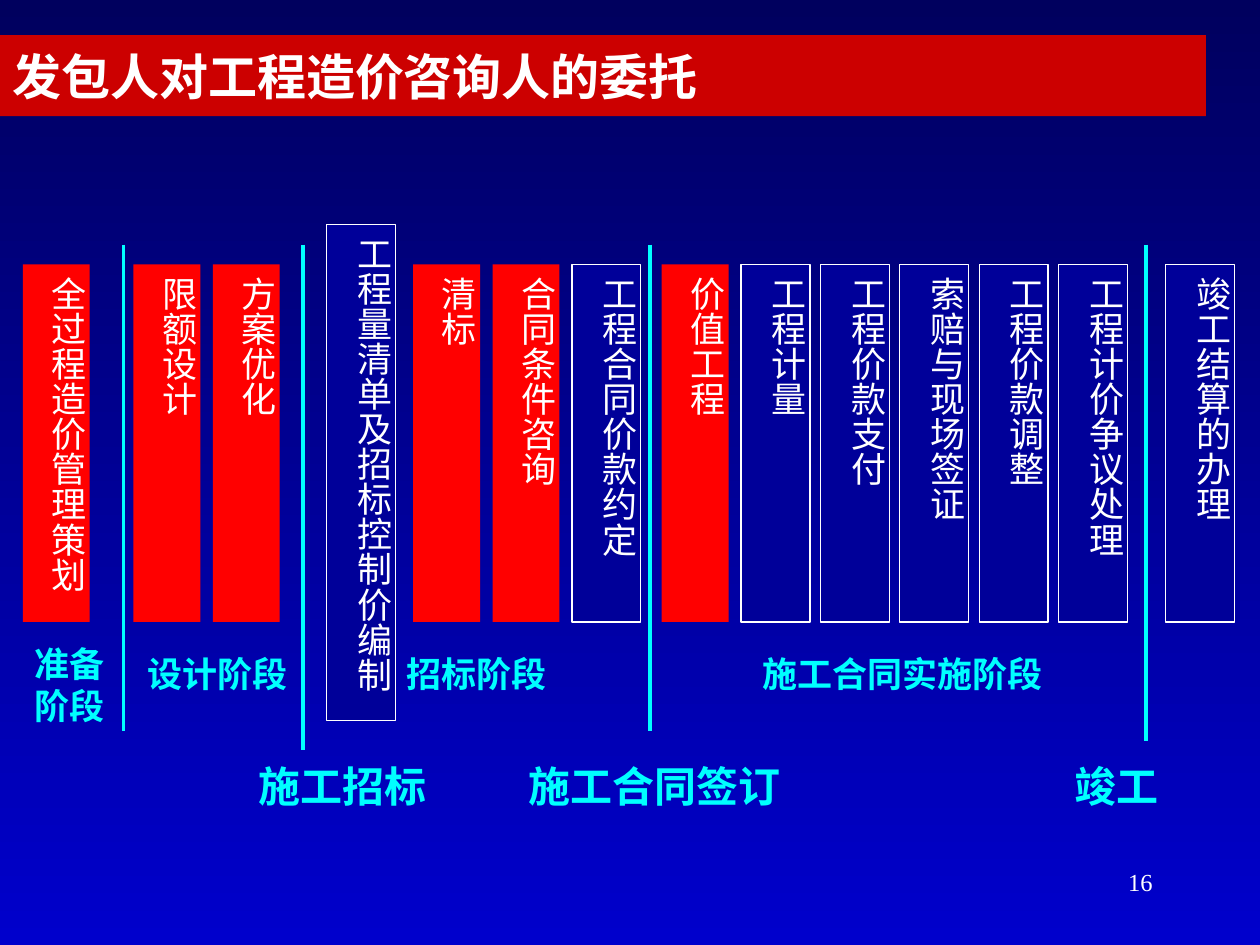
from lxml.etree import SubElement
from pptx import Presentation
from pptx.dml.color import RGBColor
from pptx.enum.shapes import MSO_CONNECTOR, MSO_SHAPE
from pptx.enum.text import MSO_ANCHOR, MSO_AUTO_SIZE, PP_ALIGN
from pptx.oxml.ns import qn
from pptx.util import Cm, Pt

NIGHT = RGBColor(0x00, 0x00, 0x5E)
ROYAL = RGBColor(0x00, 0x00, 0xCC)
NAVY = RGBColor(0x00, 0x00, 0x99)
CRIMSON = RGBColor(0xCC, 0x00, 0x00)
RED = RGBColor(0xFF, 0x00, 0x00)
CYAN = RGBColor(0x00, 0xFF, 0xFF)
WHITE = RGBColor(0xFF, 0xFF, 0xFF)
SANS = "Noto Sans CJK SC"
SERIF = "Times New Roman"

BAR_PITCH = 1.6
BAR_TOP, BAR_HEIGHT = 5.33, 7.21

PHASES = [
    ((0.46, BAR_TOP, BAR_HEIGHT), [("全过程造价管理策划", True)]),
    ((2.69, BAR_TOP, BAR_HEIGHT), [("限额设计", True), ("方案优化", True)]),
    ((6.58, 4.52, 10.01), [("工程量清单及招标控制价编制", False)]),
    ((8.33, BAR_TOP, BAR_HEIGHT),
     [("清标", True), ("合同条件咨询", True), ("工程合同价款约定", False)]),
    ((13.34, BAR_TOP, BAR_HEIGHT),
     [("价值工程", True), ("工程计量", False), ("工程价款支付", False),
      ("索赔与现场签证", False), ("工程价款调整", False), ("工程计价争议处理", False)]),
    ((23.5, BAR_TOP, BAR_HEIGHT), [("竣工结算的办理", False)]),
]
DIVIDERS = [(2.49, 9.8), (6.1, 10.19), (13.1, 9.8), (23.11, 10.01)]
STAGES = [
    ((-1.5, 12.93, 5.79, 1.57), "准备\n阶段", SERIF),
    ((1.5, 13.13, 5.79, 0.84), "设计阶段", SANS),
    ((6.71, 13.13, 5.79, 0.84), "招标阶段", SANS),
    ((14.5, 13.13, 7.39, 1.47), "施工合同实施阶段", SANS),
]
MILESTONES = [
    ((4.5, 15.32, 4.8, 1.7), "施工招标", SANS),
    ((9.09, 15.32, 8.2, 0.97), "施工合同签订", SANS),
    ((19.61, 15.32, 5.79, 0.97), "竣工", SERIF),
]


def style_text(frame, text, size, color, align, bold=False, latin=SANS):
    """Fill a text frame and format each of its paragraphs."""
    frame.text = text
    frame.word_wrap = True
    frame.auto_size = MSO_AUTO_SIZE.NONE
    for paragraph in frame.paragraphs:
        paragraph.alignment = align
        paragraph.space_before = Pt(0)
        font = paragraph.font
        font.size, font.bold, font.name = Pt(size), bold, latin
        font.color.rgb = color
        properties = paragraph._p.pPr.find(qn("a:defRPr"))
        SubElement(properties, qn("a:ea")).set("typeface", SANS)


def paint_background(slide):
    """Shade the slide from dark blue at the top to blue at the bottom."""
    fill = slide.background.fill
    fill.gradient()
    fill.gradient_angle = 270
    for stop, color in zip(fill.gradient_stops, (NIGHT, ROYAL)):
        stop.color.rgb = color


def place_title(slide, box, text):
    """Turn the title placeholder into a filled banner."""
    title = slide.shapes.title
    title.left, title.top, title.width, title.height = map(Cm, box)
    title.fill.solid()
    title.fill.fore_color.rgb = CRIMSON
    style_text(title.text_frame, text, 28, WHITE, PP_ALIGN.LEFT, bold=True)
    title.text_frame.vertical_anchor = MSO_ANCHOR.MIDDLE


def place_phase(slide, box, tasks):
    """Set the vertical task bars of one phase side by side."""
    left, top, height = box
    for index, (task, highlighted) in enumerate(tasks):
        bar = slide.shapes.add_shape(
            MSO_SHAPE.RECTANGLE, Cm(left + index * BAR_PITCH), Cm(top),
            Cm(1.35 if highlighted else 1.39), Cm(height))
        bar.shadow.inherit = False
        bar.fill.solid()
        bar.fill.fore_color.rgb = RED if highlighted else NAVY
        if highlighted:
            bar.line.fill.background()
        else:
            bar.line.color.rgb = WHITE
            bar.line.width = Pt(0.75)
        frame = bar.text_frame
        style_text(frame, task, 20, WHITE, PP_ALIGN.LEFT)
        frame.vertical_anchor = MSO_ANCHOR.TOP
        frame.margin_left = frame.margin_right = Cm(0.02)
        frame.margin_top, frame.margin_bottom = Cm(0.25), Cm(0)
        frame._txBody.bodyPr.set("vert", "eaVert")


def place_divider(slide, left, top, height):
    """Draw the vertical line between two phases."""
    divider = slide.shapes.add_connector(
        MSO_CONNECTOR.STRAIGHT, Cm(left), Cm(top), Cm(left), Cm(top + height))
    divider.line.color.rgb = CYAN
    divider.line.width = Pt(2.25)
    SubElement(divider._element.spPr, qn("a:effectLst"))


def place_label(slide, box, text, size, latin):
    """Write a centred bold label of a stage or milestone."""
    label = slide.shapes.add_textbox(*map(Cm, box))
    frame = label.text_frame
    style_text(frame, text, size, CYAN, PP_ALIGN.CENTER, bold=True, latin=latin)
    frame.margin_top = frame.margin_bottom = Cm(0.02)


def place_page_number(slide, box, number):
    """Write the page number at the lower right."""
    page = slide.shapes.add_textbox(*map(Cm, box))
    style_text(page.text_frame, number, 14, WHITE, PP_ALIGN.RIGHT, latin=SERIF)


def main():
    """Build and save the slide."""
    deck = Presentation()
    deck.slide_width, deck.slide_height = Cm(25.4), Cm(19.05)
    slide = deck.slides.add_slide(deck.slide_layouts[5])
    paint_background(slide)
    place_title(slide, (0, 0.71, 24.31, 1.63), "发包人对工程造价咨询人的委托")
    for box, tasks in PHASES:
        place_phase(slide, box, tasks)
    for left, height in DIVIDERS:
        place_divider(slide, left, 4.93, height)
    for labels, size in ((STAGES, 20), (MILESTONES, 24)):
        for box, text, latin in labels:
            place_label(slide, box, text, size, latin)
    place_page_number(slide, (18.21, 17.35, 5.28, 1.27), "16")
    deck.save("out.pptx")


if __name__ == "__main__":
    main()
